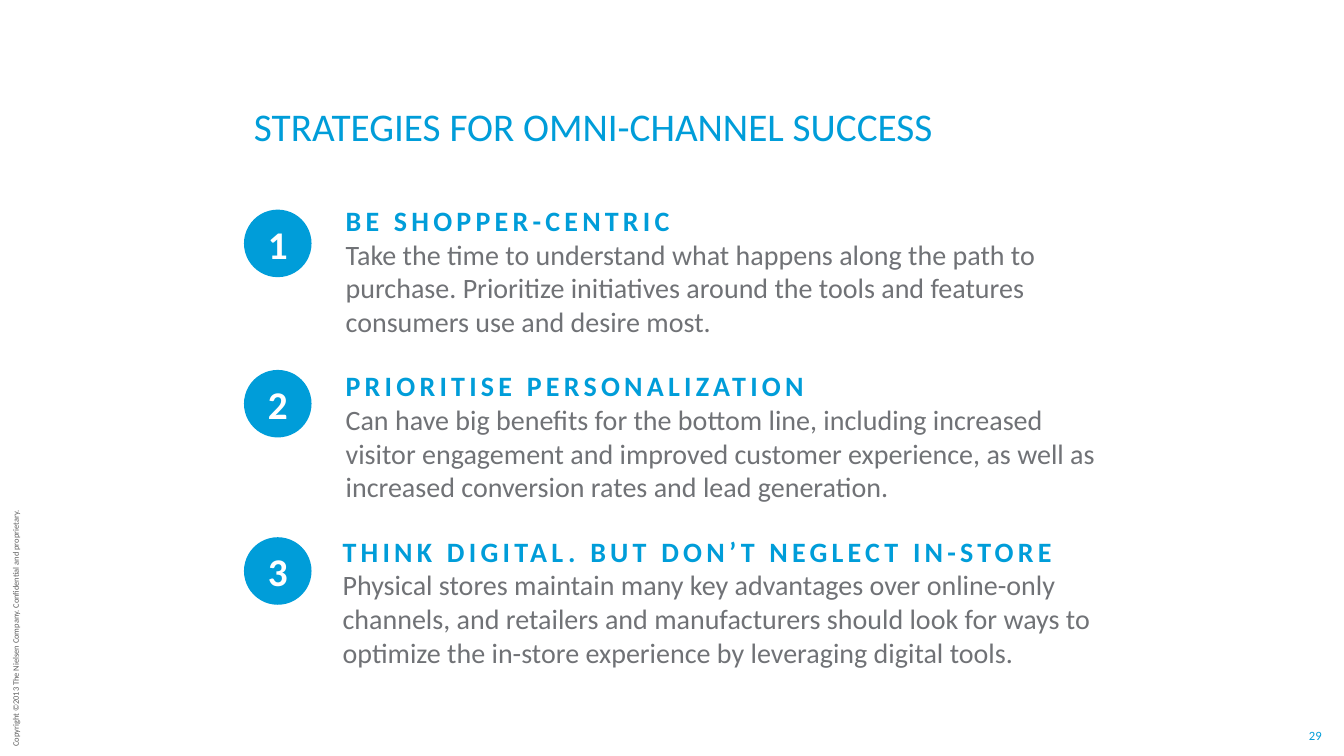
from pptx import Presentation
from pptx.dml.color import RGBColor
from pptx.enum.shapes import MSO_SHAPE
from pptx.enum.text import MSO_ANCHOR, PP_ALIGN
from pptx.util import Inches, Pt

TITLE = "STRATEGIES FOR OMNI-CHANNEL SUCCESS"
COPYRIGHT = "Copyright ©2013 The Nielsen Company. Confidential and proprietary."
PAGE_NUMBER = "29"

# heading, advice, circle top, text left, text width
STRATEGIES = [
    ("BE SHOPPER-CENTRIC",
     "Take the time to understand what happens along the path to purchase. "
     "Prioritize initiatives around the tools and features consumers use and desire most.",
     2.08, 3.33, 7.8),
    ("PRIORITISE PERSONALIZATION",
     "Can have big benefits for the bottom line, including increased visitor engagement "
     "and improved customer experience, as well as increased conversion rates and lead generation.",
     3.67, 3.33, 7.67),
    ("THINK DIGITAL. BUT DON’T NEGLECT IN-STORE",
     "Physical stores maintain many key advantages over online-only channels, and retailers "
     "and manufacturers should look for ways to optimize the in-store experience by "
     "leveraging digital tools.",
     5.33, 3.3, 8.14),
]

THEME = {
    "font": "Calibri",
    "blue": RGBColor(0x00, 0x9D, 0xD9),
    "grey": RGBColor(0x70, 0x72, 0x76),
    "dark": RGBColor(0x5F, 0x5F, 0x5F),
    "white": RGBColor(0xFF, 0xFF, 0xFF),
    "title": 28, "number": 28, "body": 20, "page": 9, "copyright": 6,
}
HEADING_SPACING = "300"  # hundredths of a point

CONTENT_LEFT = 2.42
CIRCLE_SIZE = 0.67
TEXT_TOP, TEXT_STEP, TEXT_HEIGHT = 1.97, 1.64, 1.45
NO_MARGINS = dict.fromkeys(("margin_left", "margin_right", "margin_top", "margin_bottom"), 0)


def set_frame(frame, **formats):
    for attribute, value in formats.items():
        setattr(frame, attribute, value)
    return frame


def write(paragraph, text, size, color, bold=False, align=PP_ALIGN.LEFT):
    paragraph.alignment = align
    run = paragraph.add_run()
    run.text = text
    formats = {"name": THEME["font"], "size": Pt(THEME[size]), "bold": bold}
    for attribute, value in formats.items():
        setattr(run.font, attribute, value)
    run.font.color.rgb = THEME[color]
    return run


def add_label(slide, box, text, size, color, align=PP_ALIGN.LEFT, **formats):
    label = slide.shapes.add_textbox(*map(Inches, box))
    frame = set_frame(label.text_frame, **formats)
    write(frame.paragraphs[0], text, size, color, align=align)
    return label


def add_number(slide, number, top):
    circle = slide.shapes.add_shape(
        MSO_SHAPE.OVAL, *map(Inches, (CONTENT_LEFT, top, CIRCLE_SIZE, CIRCLE_SIZE)))
    circle.shadow.inherit = False
    circle.fill.solid()
    circle.fill.fore_color.rgb = THEME["blue"]
    circle.line.fill.background()
    frame = set_frame(circle.text_frame, word_wrap=False,
                      vertical_anchor=MSO_ANCHOR.MIDDLE, **NO_MARGINS)
    write(frame.paragraphs[0], str(number), "number", "white", True, PP_ALIGN.CENTER)


def add_strategy(slide, index, heading, advice, circle_top, left, width):
    add_number(slide, index + 1, circle_top)
    top = TEXT_TOP + index * TEXT_STEP
    box = slide.shapes.add_textbox(*map(Inches, (left, top, width, TEXT_HEIGHT)))
    frame = set_frame(box.text_frame, word_wrap=True)
    heading_run = write(frame.paragraphs[0], heading, "body", "blue", True)
    heading_run.font._element.set("spc", HEADING_SPACING)
    write(frame.add_paragraph(), advice, "body", "grey")


def main():
    deck = Presentation()
    deck.slide_width, deck.slide_height = Inches(13.33), Inches(7.5)
    slide = deck.slides.add_slide(deck.slide_layouts[6])

    copyright_line = add_label(slide, (-1.14, 6.11, 2.59, 0.2), COPYRIGHT,
                               "copyright", "dark", word_wrap=False)
    copyright_line.rotation = 270
    add_label(slide, (12.97, 7.22, 0.15, 0.15), PAGE_NUMBER, "page", "blue",
              PP_ALIGN.CENTER, word_wrap=False,
              vertical_anchor=MSO_ANCHOR.MIDDLE, **NO_MARGINS)
    add_label(slide, (CONTENT_LEFT, 0.99, 7.85, 0.49), TITLE, "title", "blue",
              word_wrap=True, vertical_anchor=MSO_ANCHOR.BOTTOM,
              margin_top=0, margin_bottom=0)
    for index, strategy in enumerate(STRATEGIES):
        add_strategy(slide, index, *strategy)

    deck.save("out.pptx")


if __name__ == "__main__":
    main()
